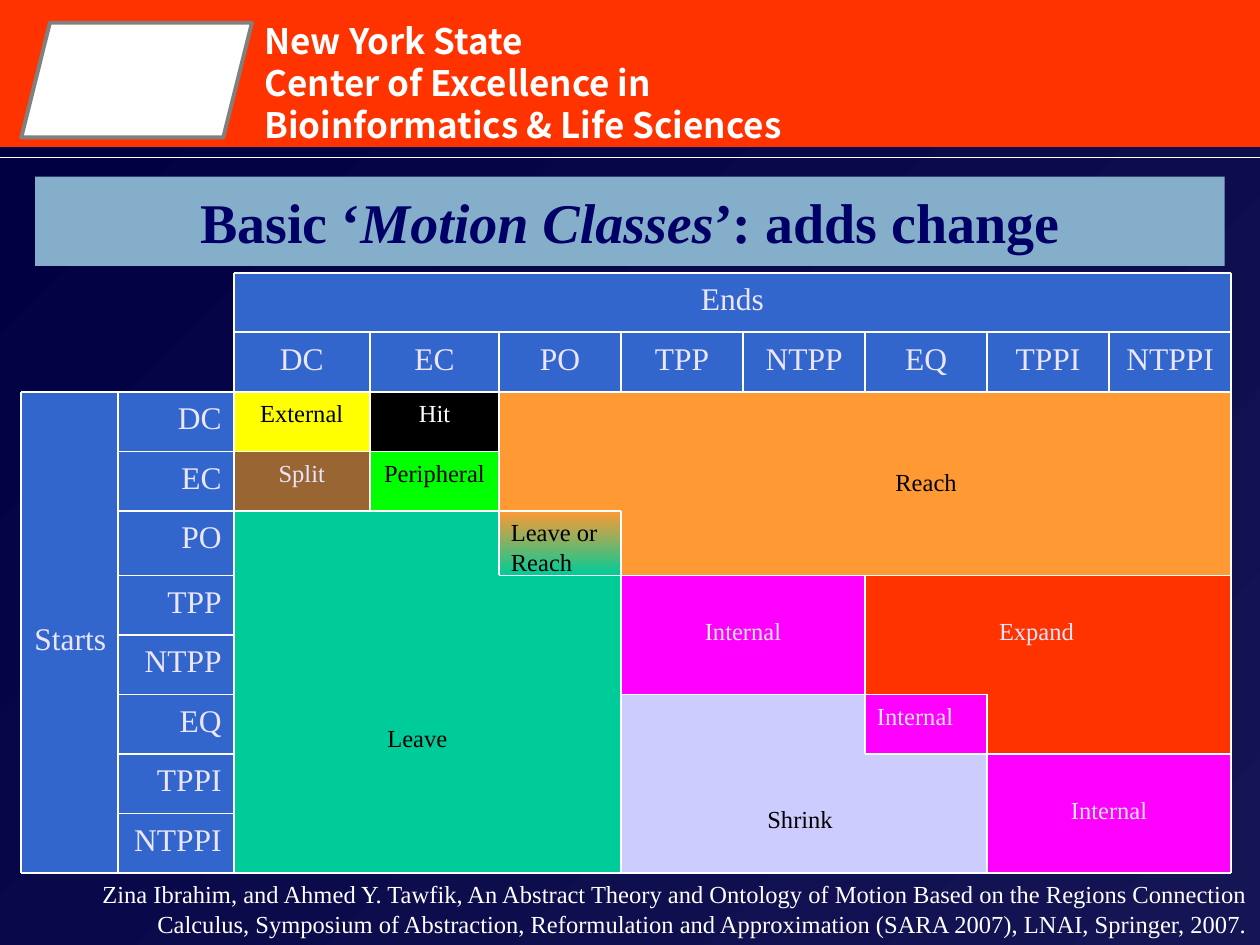
from dataclasses import dataclass

from lxml.etree import SubElement
from pptx import Presentation
from pptx.dml.color import RGBColor
from pptx.enum.shapes import MSO_CONNECTOR, MSO_SHAPE
from pptx.enum.text import MSO_ANCHOR, MSO_AUTO_SIZE, PP_ALIGN
from pptx.oxml.ns import qn
from pptx.util import Cm, Pt

COLOURS = {
    "red": "FF3300", "night": "000042", "dusk": "151555", "white": "FFFFFF",
    "grey": "808080", "steel": "84AECA", "navy": "000066", "blue": "3366CC",
    "pale": "EBE6FC", "black": "000000", "yellow": "FFFF00", "brown": "996633",
    "lime": "00FF00", "orange": "FF9933", "teal": "00CC99", "magenta": "FF00FF",
    "lavender": "CCCCFF",
}
SERIF = "Times New Roman"
RELATIONS = ["DC", "EC", "PO", "TPP", "NTPP", "EQ", "TPPI", "NTPPI"]
COLUMNS = [0.43, 2.38, 4.71, 7.46] + [10.06 + 2.46 * step for step in range(7)]
ROWS = [5.5 + 1.2 * step for step in range(5)] + [11.6 + 1.2 * step for step in range(6)]
INSET_X, INSET_Y = 0.24, 0.13


@dataclass
class Region:
    left: int
    top: int
    right: int
    bottom: int
    fills: tuple
    label: str = ""
    ink: str = "pale"
    size: int = 14
    align: PP_ALIGN = PP_ALIGN.CENTER
    lines_down: int = 0
    indent: float = INSET_X


@dataclass
class Rule:
    track: int
    start: int
    end: int


HEADERS = [
    Region(2, 0, 10, 1, ("blue",), "Ends", size=18),
    Region(0, 2, 1, 10, ("blue",), "Starts", size=18, align=PP_ALIGN.RIGHT, lines_down=5),
]
for place, relation in enumerate(RELATIONS, start=2):
    HEADERS.append(Region(place, 1, place + 1, 2, ("blue",), relation, size=18))
    HEADERS.append(Region(1, place, 2, place + 1, ("blue",), relation, size=18,
                          align=PP_ALIGN.RIGHT))

MOTIONS = [
    Region(2, 2, 3, 3, ("yellow",), "External", "black"),
    Region(3, 2, 4, 3, ("black",), "Hit", "white"),
    Region(2, 3, 3, 4, ("brown",), "Split"),
    Region(3, 3, 4, 4, ("lime",), "Peripheral", "black"),
    Region(4, 2, 5, 4, ("orange",)),
    Region(5, 2, 10, 5, ("orange",), "Reach", "black", lines_down=2),
    Region(4, 4, 5, 5, ("orange", "teal"), "Leave or Reach", "black", align=PP_ALIGN.LEFT),
    Region(2, 4, 4, 10, ("teal",), "Leave", "black", align=PP_ALIGN.LEFT,
           lines_down=6, indent=3.1),
    Region(4, 5, 5, 10, ("teal",)),
    Region(5, 5, 7, 7, ("magenta",), "Internal", lines_down=1),
    Region(7, 5, 8, 7, ("red",)),
    Region(8, 5, 10, 8, ("red",), "Expand", align=PP_ALIGN.LEFT, lines_down=1),
    Region(7, 7, 8, 8, ("magenta",), "Internal", align=PP_ALIGN.LEFT),
    Region(5, 7, 7, 10, ("lavender",), "Shrink", "black", align=PP_ALIGN.LEFT,
           lines_down=3, indent=2.95),
    Region(7, 8, 8, 10, ("lavender",)),
    Region(8, 8, 10, 10, ("magenta",), "Internal", lines_down=1),
]

RULES = [
    Rule(0, 2, 10), Rule(1, 2, 10), Rule(2, 0, 10), Rule(3, 1, 4), Rule(4, 1, 5),
    Rule(5, 1, 2), Rule(5, 4, 10), Rule(6, 1, 2), Rule(7, 1, 2), Rule(7, 5, 8),
    Rule(8, 1, 2), Rule(8, 7, 10), Rule(9, 1, 2), Rule(10, 0, 10),
]
COLUMN_RULES = [
    Rule(0, 2, 10), Rule(1, 2, 10), Rule(2, 0, 10), *RULES[3:],
]


def colour(name: str) -> RGBColor:
    return RGBColor.from_string(COLOURS[name])


def paint(shape, fills: tuple, angle: int = 270) -> None:
    if len(fills) == 1:
        shape.fill.solid()
        shape.fill.fore_color.rgb = colour(fills[0])
        return
    shape.fill.gradient()
    shape.fill.gradient_angle = angle
    for stop, name in zip(shape.fill.gradient_stops, fills):
        stop.color.rgb = colour(name)


def add_block(slide, kind, left: float, top: float, width: float, height: float,
              fills: tuple, angle: int = 270):
    block = slide.shapes.add_shape(kind, Cm(left), Cm(top), Cm(width), Cm(height))
    block.shadow.inherit = False
    block.line.fill.background()
    paint(block, fills, angle)
    return block


def style(paragraph, size: int, ink: str, align: PP_ALIGN, face: str = SERIF,
          bold: bool = False) -> None:
    paragraph.alignment = align
    font = paragraph.font
    font.name, font.size, font.bold = face, Pt(size), bold
    font.color.rgb = colour(ink)


def add_region(slide, region: Region) -> None:
    left, top = COLUMNS[region.left], ROWS[region.top]
    block = add_block(slide, MSO_SHAPE.RECTANGLE, left, top,
                      COLUMNS[region.right] - left, ROWS[region.bottom] - top, region.fills)
    if not region.label:
        return
    frame = block.text_frame
    frame.word_wrap = True
    frame.vertical_anchor = MSO_ANCHOR.TOP
    frame.margin_left, frame.margin_right = Cm(region.indent), Cm(INSET_X)
    frame.margin_top = Cm(INSET_Y) + Pt(region.lines_down * region.size * 1.4)
    frame.margin_bottom = Cm(0)
    frame.text = region.label
    style(frame.paragraphs[0], region.size, region.ink, region.align)


def add_line(slide, x1: float, y1: float, x2: float, y2: float, weight: float = 1) -> None:
    line = slide.shapes.add_connector(MSO_CONNECTOR.STRAIGHT, Cm(x1), Cm(y1), Cm(x2), Cm(y2))
    line.line.color.rgb = colour("white")
    line.line.width = Pt(weight)
    SubElement(line._element.spPr, qn("a:effectLst"))


def add_text(slide, left: float, top: float, width: float, height: float):
    frame = slide.shapes.add_textbox(Cm(left), Cm(top), Cm(width), Cm(height)).text_frame
    frame.word_wrap = True
    return frame


def add_banner(slide) -> None:
    add_block(slide, MSO_SHAPE.RECTANGLE, 0, 2.97, 25.4, 16.08, ("night", "dusk"), 315)
    emblem = add_block(slide, MSO_SHAPE.PARALLELOGRAM, 0.43, 0.46, 4.65, 2.31, ("white",))
    emblem.line.color.rgb = colour("grey")
    emblem.line.width = Pt(2.25)
    centre = add_text(slide, 5.08, 0.2, 11.63, 3.12)
    centre.margin_top = Cm(0.2)
    centre.text = "New York State\nCenter of Excellence in Bioinformatics & Life Sciences"
    for paragraph in centre.paragraphs:
        style(paragraph, 20, "white", PP_ALIGN.LEFT, "Noto Sans CJK KR", True)
        paragraph.line_spacing = Pt(24)
    add_line(slide, 0, 3.17, 25.4, 3.17, 0.75)


def add_title(slide) -> None:
    title = slide.shapes.title
    slide.shapes._spTree.append(title._element)
    title.left, title.top, title.width, title.height = Cm(0.71), Cm(3.56), Cm(23.98), Cm(1.8)
    paint(title, ("steel",))
    frame = title.text_frame
    frame.auto_size = MSO_AUTO_SIZE.NONE
    frame.vertical_anchor = MSO_ANCHOR.MIDDLE
    heading = frame.paragraphs[0]
    for words, italic in (("Basic ‘", False), ("Motion Classes", True), ("’: adds change", False)):
        run = heading.add_run()
        run.text, run.font.italic = words, italic
    style(heading, 32, "navy", PP_ALIGN.CENTER, bold=True)


def add_citation(slide) -> None:
    citation = add_text(slide, 0, 17.6, 25.4, 1.45)
    citation.margin_left = Cm(1)
    citation.text = (
        "Zina Ibrahim, and Ahmed Y. Tawfik, An Abstract Theory and Ontology of Motion "
        "Based on the Regions Connection Calculus, Symposium of Abstraction, Reformulation "
        "and Approximation (SARA 2007), LNAI, Springer, 2007.")
    style(citation.paragraphs[0], 14, "white", PP_ALIGN.RIGHT)


def main() -> None:
    deck = Presentation()
    deck.slide_width, deck.slide_height = Cm(25.4), Cm(19.05)
    slide = deck.slides.add_slide(deck.slide_layouts[5])
    slide.background.fill.solid()
    slide.background.fill.fore_color.rgb = colour("red")
    add_banner(slide)
    add_title(slide)
    for region in HEADERS + MOTIONS:
        add_region(slide, region)
    for rule in RULES:
        add_line(slide, COLUMNS[rule.start], ROWS[rule.track], COLUMNS[rule.end], ROWS[rule.track])
    for rule in COLUMN_RULES:
        add_line(slide, COLUMNS[rule.track], ROWS[rule.start], COLUMNS[rule.track], ROWS[rule.end])
    add_citation(slide)
    deck.save("out.pptx")


if __name__ == "__main__":
    main()
